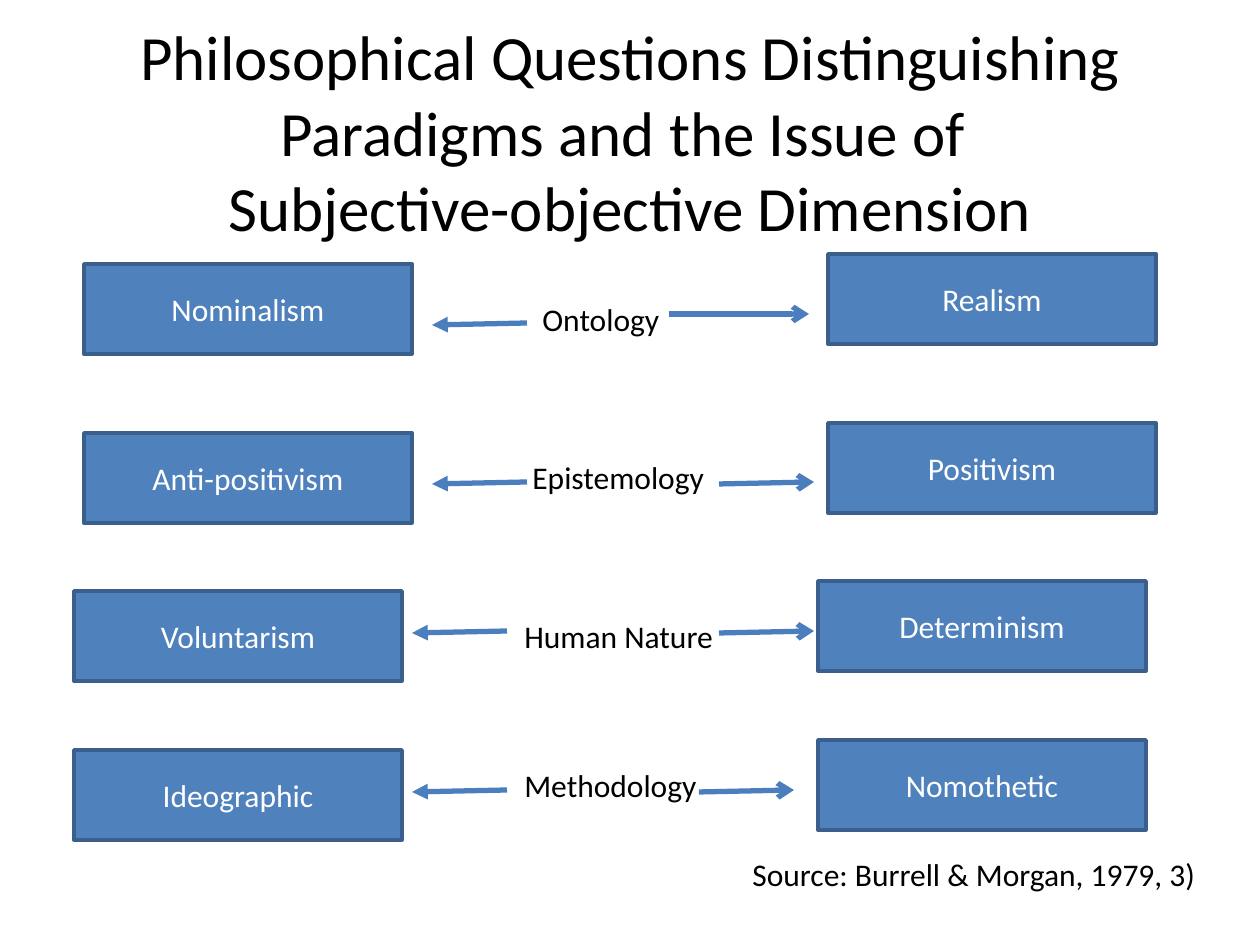
"""Build the slide on philosophical questions that distinguish paradigms."""
from dataclasses import dataclass

from lxml.etree import SubElement
from pptx import Presentation
from pptx.dml.color import RGBColor
from pptx.enum.shapes import MSO_CONNECTOR as Connector, MSO_SHAPE as Shape
from pptx.enum.text import MSO_ANCHOR as Anchor, PP_ALIGN as Align
from pptx.oxml.ns import qn
from pptx.util import Pt

TITLE = ["Philosophical Questions Distinguishing Paradigms and the Issue of ",
         "Subjective-objective Dimension"]
TITLE_BOX = (63, 38, 1134, 186)
SOURCE = "Source: Burrell & Morgan, 1979, 3)"
SOURCE_BOX = (740, 849, 474, 50)

ROWS = [
    dict(left="Nominalism", right="Realism", box=(84, 264),
         label="Ontology", label_box=(530, 294, 144, 50),
         subjective=(432, 325, 527, 323), objective=(669, 314, 809, 314)),
    dict(left="Anti-positivism", right="Positivism", box=(84, 433),
         label="Epistemology", label_box=(520, 452, 199, 50),
         subjective=(432, 484, 527, 482), objective=(719, 484, 814, 482)),
    dict(left="Voluntarism", right="Determinism", box=(74, 591),
         label="Human Nature", label_box=(512, 611, 217, 50),
         subjective=(412, 633, 507, 631), objective=(719, 633, 814, 631)),
    dict(left="Ideographic", right="Nomothetic", box=(74, 750),
         label="Methodology", label_box=(512, 760, 199, 50),
         subjective=(412, 792, 507, 790), objective=(699, 792, 794, 790)),
]
BOX_W, BOX_H = 328, 90
RIGHT_DX, RIGHT_DY = 744, -10


@dataclass(frozen=True)
class Theme:
    font: str = "Calibri"
    title_size: int = 36
    text_size: int = 18
    text: str = "000000"
    box_text: str = "FFFFFF"
    box_fill: str = "4F81BD"
    box_line: str = "3A5F8C"
    arrow: str = "4B7EBC"
    box_line_width: int = 2
    arrow_width: int = 3


T = Theme()
EMU_PER_PX = 914400 / 126


def px(*values):
    return [round(v * EMU_PER_PX) for v in values]


def rgb(color):
    return RGBColor.from_string(color)


def add_run(p, text, size, color):
    r = p.add_run()
    r.text = text
    r.font.name, r.font.size = T.font, Pt(size)
    r.font.color.rgb = rgb(color)


def add_title(s):
    sp = s.shapes.title
    sp.left, sp.top, sp.width, sp.height = px(*TITLE_BOX)
    tf = sp.text_frame
    tf.word_wrap, tf.vertical_anchor = True, Anchor.MIDDLE
    p = tf.paragraphs[0]
    p.alignment = Align.CENTER
    for i, line in enumerate(TITLE):
        if i:
            p.add_line_break()
        add_run(p, line, T.title_size, T.text)


def add_text(s, text, box):
    tf = s.shapes.add_textbox(*px(*box)).text_frame
    tf.word_wrap = False
    add_run(tf.paragraphs[0], text, T.text_size, T.text)


def add_box(s, text, x, y):
    sp = s.shapes.add_shape(Shape.FLOWCHART_PROCESS, *px(x, y, BOX_W, BOX_H))
    sp.shadow.inherit = False
    sp.fill.solid()
    sp.fill.fore_color.rgb = rgb(T.box_fill)
    sp.line.color.rgb = rgb(T.box_line)
    sp.line.width = Pt(T.box_line_width)
    tf = sp.text_frame
    tf.vertical_anchor = Anchor.MIDDLE
    p = tf.paragraphs[0]
    p.alignment = Align.CENTER
    add_run(p, text, T.text_size, T.box_text)


def add_arrow(s, ends, end_tag, kind):
    line = s.shapes.add_connector(Connector.STRAIGHT, *px(*ends))
    line.line.color.rgb = rgb(T.arrow)
    line.line.width = Pt(T.arrow_width)
    SubElement(line.line._get_or_add_ln(), qn(end_tag), type=kind)
    SubElement(line._element.spPr, qn("a:effectLst"))


def main():
    prs = Presentation()
    prs.slide_width, prs.slide_height = px(1260, 945)
    s = prs.slides.add_slide(prs.slide_layouts[5])
    add_title(s)
    for row in ROWS:
        x, y = row["box"]
        add_box(s, row["left"], x, y)
        add_box(s, row["right"], x + RIGHT_DX, y + RIGHT_DY)
        add_text(s, row["label"], row["label_box"])
        add_arrow(s, row["subjective"], "a:headEnd", "triangle")
        add_arrow(s, row["objective"], "a:tailEnd", "arrow")
    add_text(s, SOURCE, SOURCE_BOX)
    prs.save("out.pptx")


if __name__ == "__main__":
    main()
